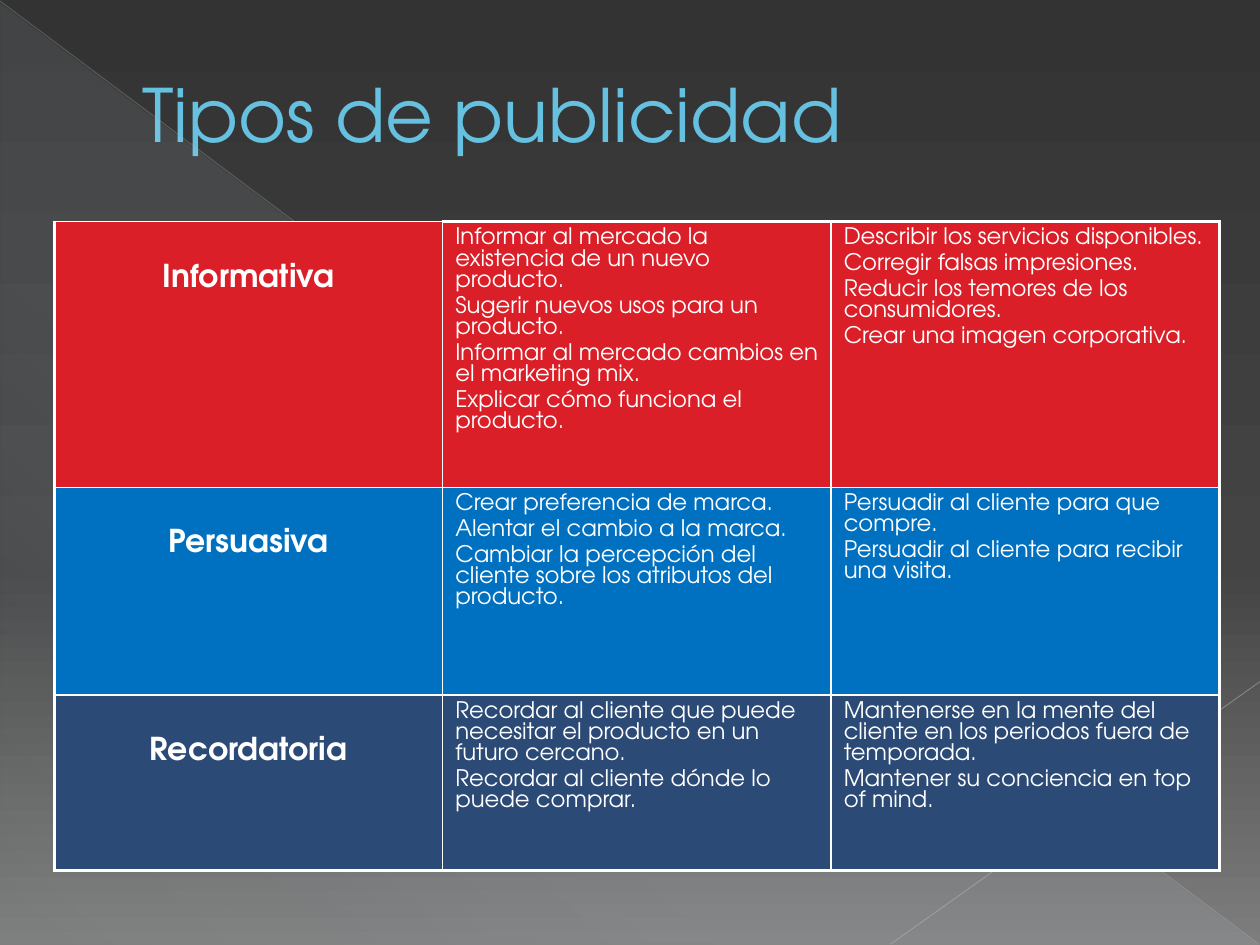
"""Builds the slide on the three types of advertising."""
from dataclasses import dataclass

from lxml.etree import SubElement
from pptx import Presentation
from pptx.dml.color import RGBColor
from pptx.enum.shapes import MSO_CONNECTOR, MSO_SHAPE
from pptx.enum.text import MSO_ANCHOR, PP_ALIGN
from pptx.oxml.ns import qn
from pptx.util import Pt


@dataclass(frozen=True)
class Theme:
    """Colours, type sizes and line widths."""
    font: str = "TeX Gyre Adventor"
    title: str = "66C0E0"
    text: str = "FFFFFF"
    border: str = "FFFFFF"
    backdrop: tuple = ((0, "333333", 100), (60, "444444", 100), (100, "7D7D7D", 100))
    glow: tuple = ((0, "DEF5FA", 10), (70, "DEF5FA", 8), (100, "DEF5FA", 1))
    title_size: float = 42
    label_size: float = 18
    body_size: float = 13
    thin: float = 1
    thick: float = 2.25


def apply(target, values):
    """Set each attribute named in values."""
    for name, value in values.items():
        setattr(target, name, value)


def add_color(parent, color, alpha=100):
    """Append a colour with its opacity in percent."""
    tint = SubElement(parent, qn("a:srgbClr"), val=color)
    if alpha < 100:
        SubElement(tint, qn("a:alpha"), val=str(alpha * 1000))


class SlideBuilder:
    """Holds the theme and the current slide."""

    def __init__(self, theme, slide):
        self.theme, self.slide = theme, slide

    def gradient(self, fill, owner, stops, angle):
        """Give a fill the stops and the clockwise angle."""
        fill.gradient()
        gradient = next(owner.iter(qn("a:gradFill")))
        for part in list(gradient):
            gradient.remove(part)
        stop_list = SubElement(gradient, qn("a:gsLst"))
        for position, color, alpha in stops:
            stop = SubElement(stop_list, qn("a:gs"), pos=str(position * 1000))
            add_color(stop, color, alpha)
        SubElement(gradient, qn("a:lin"), ang=str(angle * 60000), scaled="0")

    def background(self):
        """Fill the backdrop."""
        self.gradient(self.slide.background.fill, self.slide.element, self.theme.backdrop, 90)

    def triangle(self, left, top, width, height):
        """Add the translucent corner."""
        corner = self.slide.shapes.add_shape(
            MSO_SHAPE.RIGHT_TRIANGLE, Pt(left), Pt(top), Pt(width), Pt(height))
        corner.shadow.inherit = False
        corner.line.fill.background()
        self.gradient(corner.fill, corner.element.spPr, self.theme.glow, 133)

    def ray(self, start, end, color, width, alpha):
        """Add a translucent straight line."""
        ray = self.slide.shapes.add_connector(
            MSO_CONNECTOR.STRAIGHT, *map(Pt, start + end))
        ray.line.width = Pt(width)
        ray.line.color.rgb = RGBColor.from_string(color)
        tint = next(ray.element.spPr.iter(qn("a:srgbClr")))
        SubElement(tint, qn("a:alpha"), val=str(alpha * 1000))
        SubElement(ray.element.spPr, qn("a:effectLst"))

    def add_wording(self, paragraph, wording, size, color, bold=False):
        """Add one styled run."""
        run = paragraph.add_run()
        run.text = wording
        apply(run.font, {"name": self.theme.font, "size": Pt(size), "bold": bold})
        run.font.color.rgb = RGBColor.from_string(color)

    def title(self, wording, left, top, width, height, indent):
        """Place and fill the title."""
        heading = self.slide.shapes.title
        apply(heading, {"left": Pt(left), "top": Pt(top),
                        "width": Pt(width), "height": Pt(height)})
        apply(heading.text_frame, {"vertical_anchor": MSO_ANCHOR.MIDDLE, "word_wrap": True,
                                   "margin_left": Pt(7.2 + indent)})
        paragraph = heading.text_frame.paragraphs[0]
        paragraph.alignment = PP_ALIGN.LEFT
        self.add_wording(paragraph, wording, self.theme.title_size, self.theme.title)

    def borders(self, cell, widths):
        """Draw the four sides of a cell."""
        properties = cell._tc.get_or_add_tcPr()
        for place, (side, width) in enumerate(widths.items()):
            edge = SubElement(properties, qn(f"a:ln{side}"), w=str(Pt(width)))
            add_color(SubElement(edge, qn("a:solidFill")), self.theme.border)
            properties.insert(place, edge)

    def cell(self, cell, lines, color, is_label):
        """Fill a cell with its label or its goals."""
        theme = self.theme
        size = theme.label_size if is_label else theme.body_size
        cell.fill.solid()
        cell.fill.fore_color.rgb = RGBColor.from_string(color)
        apply(cell, {"vertical_anchor": MSO_ANCHOR.TOP,
                     "margin_top": Pt(24 if is_label else 3.6)})
        for index, wording in enumerate(lines):
            frame = cell.text_frame
            paragraph = frame.add_paragraph() if index else frame.paragraphs[0]
            apply(paragraph, {"alignment": PP_ALIGN.CENTER if is_label else PP_ALIGN.LEFT,
                              "space_before": Pt(0.2 * size if index else 0)})
            self.add_wording(paragraph, wording, size, theme.text, is_label)

    def table(self, rows, left, top, column_width, row_heights):
        """Add the table, with a thick outer frame."""
        thin, thick = self.theme.thin, self.theme.thick
        last_row, last_column = len(rows) - 1, len(rows[0][1]) - 1
        grid = self.slide.shapes.add_table(
            last_row + 1, last_column + 1, Pt(left), Pt(top),
            Pt(column_width * (last_column + 1)), Pt(sum(row_heights))).table
        apply(grid, {"first_row": False, "horz_banding": False})
        for column in grid.columns:
            column.width = Pt(column_width)
        for r, (color, contents) in enumerate(rows):
            grid.rows[r].height = Pt(row_heights[r])
            for c, lines in enumerate(contents):
                cell = grid.cell(r, c)
                self.cell(cell, lines, color, is_label=c == 0)
                self.borders(cell, {
                    "L": thick if c == 0 else thin,
                    "R": thick if c == last_column else thin,
                    "T": thick if r == 0 and c else thin,
                    "B": thick if r == last_row else thin})


ADVERTISING_TYPES = [
    ("DA1F28", [
        ["Informativa"],
        ["Informar al mercado la existencia de un nuevo producto.",
         "Sugerir nuevos usos para un producto.",
         "Informar al mercado cambios en el marketing mix.",
         "Explicar cómo funciona el producto."],
        ["Describir los servicios disponibles.",
         "Corregir falsas impresiones.",
         "Reducir los temores de los consumidores.",
         "Crear una imagen corporativa."]]),
    ("0070C0", [
        ["Persuasiva"],
        ["Crear preferencia de marca.",
         "Alentar el cambio a la marca.",
         "Cambiar la percepción del cliente sobre los atributos del producto."],
        ["Persuadir al cliente para que compre.",
         "Persuadir al cliente para recibir una visita."]]),
    ("2B4A76", [
        ["Recordatoria"],
        ["Recordar al cliente que puede necesitar el producto en un futuro cercano.",
         "Recordar al cliente dónde lo puede comprar."],
        ["Mantenerse en la mente del cliente en los periodos fuera de temporada.",
         "Mantener su conciencia en top of mind."]]),
]


def main():
    """Build and save the slide."""
    deck = Presentation()
    apply(deck, {"slide_width": Pt(720), "slide_height": Pt(540)})
    builder = SlideBuilder(Theme(), deck.slides.add_slide(deck.slide_layouts[5]))
    builder.background()
    builder.triangle(0.5, 1.5, 719, 538.5)
    builder.ray((0, 0.5), (719.5, 539.5), "B9B9B9", 0.39, 35)
    builder.ray((720, 389.5), (509, 539.5), "C1C1C1", 0.47, 45)
    builder.title("Tipos de publicidad", 36, 9.5, 648, 110, indent=38)
    builder.table(ADVERTISING_TYPES, 31, 126.7, 222, [151.8, 118.6, 100.4])
    deck.save("out.pptx")


if __name__ == "__main__":
    main()
